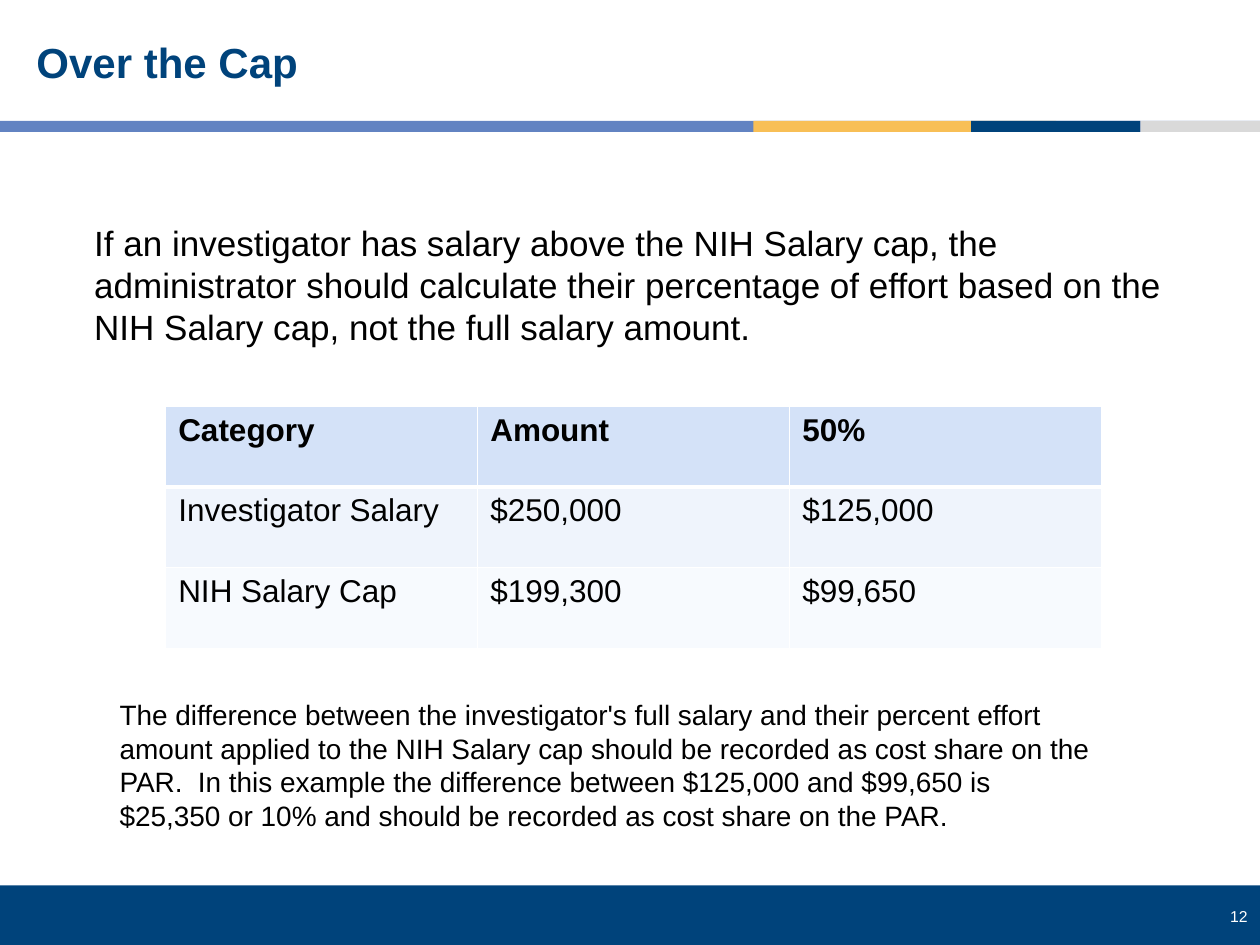
from dataclasses import dataclass
from lxml.etree import SubElement
from pptx import Presentation
from pptx.dml.color import RGBColor
from pptx.enum.shapes import MSO_SHAPE
from pptx.enum.text import MSO_ANCHOR, PP_ALIGN
from pptx.oxml.ns import qn
from pptx.util import Cm, Pt


@dataclass(frozen=True)
class Theme:
    """Colours, font and type sizes."""
    font: str = "Arial"
    navy: str = "00437B"
    blue: str = "6283C2"
    gold: str = "F8BF56"
    grey: str = "D9D9D9"
    white: str = "FFFFFF"
    black: str = "000000"
    rows: tuple = ("D4E2F8", "EFF4FC", "F7FAFE")
    title: int = 24
    lead: int = 20
    cell: int = 18
    note: int = 16
    page: int = 9


class Deck:
    """Holds the theme and the current slide."""

    def __init__(self, theme):
        self.theme = theme
        self.file = Presentation()
        self.file.slide_width = Cm(25.4)
        self.file.slide_height = Cm(19.05)
        self.slide = self.file.slides.add_slide(self.file.slide_layouts[5])

    def style(self, para, size, color, bold=False):
        """Set the font of one paragraph."""
        font = para.font
        font.name, font.size, font.bold = self.theme.font, Pt(size), bold
        font.color.rgb = RGBColor.from_string(color)

    def title(self, text, *box):
        """Fill and move the title placeholder."""
        shape = self.slide.shapes.title
        shape.left, shape.top, shape.width, shape.height = map(Cm, box)
        frame = shape.text_frame
        frame.text = text
        frame.vertical_anchor = MSO_ANCHOR.MIDDLE
        para = frame.paragraphs[0]
        para.alignment, para.line_spacing = PP_ALIGN.LEFT, 0.9
        self.style(para, self.theme.title, self.theme.navy, True)

    def bar(self, color, *box):
        """Add a plain filled bar."""
        shape = self.slide.shapes.add_shape(MSO_SHAPE.RECTANGLE, *map(Cm, box))
        shape.shadow.inherit = False
        shape.fill.solid()
        shape.fill.fore_color.rgb = RGBColor.from_string(color)
        shape.line.fill.background()

    def text(self, text, size, color, *box, align=PP_ALIGN.LEFT):
        """Add a wrapped text box."""
        frame = self.slide.shapes.add_textbox(*map(Cm, box)).text_frame
        frame.word_wrap = True
        frame.text = text
        para = frame.paragraphs[0]
        para.alignment = align
        self.style(para, size, color)

    def edge(self, cell, side, width):
        """Draw one white cell border."""
        props = cell._tc.get_or_add_tcPr()
        line = SubElement(props, qn(f"a:ln{side}"), w=str(Pt(width)))
        fill = SubElement(line, qn("a:solidFill"))
        SubElement(fill, qn("a:srgbClr"), val=self.theme.white)

    def table(self, data, *box):
        """Add a table with a bold head row."""
        shape = self.slide.shapes.add_table(len(data), len(data[0]), *map(Cm, box))
        grid = shape.table
        for r, row in enumerate(data):
            for c, text in enumerate(row):
                cell = grid.cell(r, c)
                cell.text = text
                para = cell.text_frame.paragraphs[0]
                self.style(para, self.theme.cell, self.theme.black, r == 0)
                for side in "LRTB":
                    thick = (r, side) in ((0, "B"), (1, "T"))
                    self.edge(cell, side, 3 if thick else 1)
                cell.fill.solid()
                cell.fill.fore_color.rgb = RGBColor.from_string(self.theme.rows[r])


def main():
    """Build and save the slide."""
    look = Theme()
    deck = Deck(look)
    deck.bar(look.navy, 0, 17.85, 25.4, 1.2)
    stripes = (
        (look.blue, 0, 25.4),
        (look.gold, 15.19, 6.1),
        (look.navy, 19.58, 3.41),
        (look.grey, 22.99, 2.41),
    )
    for color, left, width in stripes:
        deck.bar(color, left, 2.44, width, 0.22)
    deck.text("12", look.page, look.white, 23.65, 18.16, 1.75, 0.64,
              align=PP_ALIGN.RIGHT)
    deck.title("Over the Cap", 0.48, 0.43, 24.31, 1.75)
    deck.table((
        ("Category", "Amount", "50%"),
        ("Investigator Salary", "$250,000", "$125,000"),
        ("NIH Salary Cap", "$199,300", "$99,650"),
    ), 3.34, 8.19, 18.87, 4.88)
    deck.text(
        "If an investigator has salary above the NIH Salary cap, the "
        "administrator should calculate their percentage of effort based on "
        "the NIH Salary cap, not the full salary amount.",
        look.lead, look.black, 1.65, 4.34, 22.71, 2.82)
    deck.text(
        "The difference between the investigator's full salary and their "
        "percent effort amount applied to the NIH Salary cap should be "
        "recorded as cost share on the PAR.  In this example the difference "
        "between $125,000 and $99,650 is $25,350 or 10% and should be "
        "recorded as cost share on the PAR.",
        look.note, look.black, 2.16, 13.94, 20.14, 3)
    deck.file.save("out.pptx")


if __name__ == "__main__":
    main()
